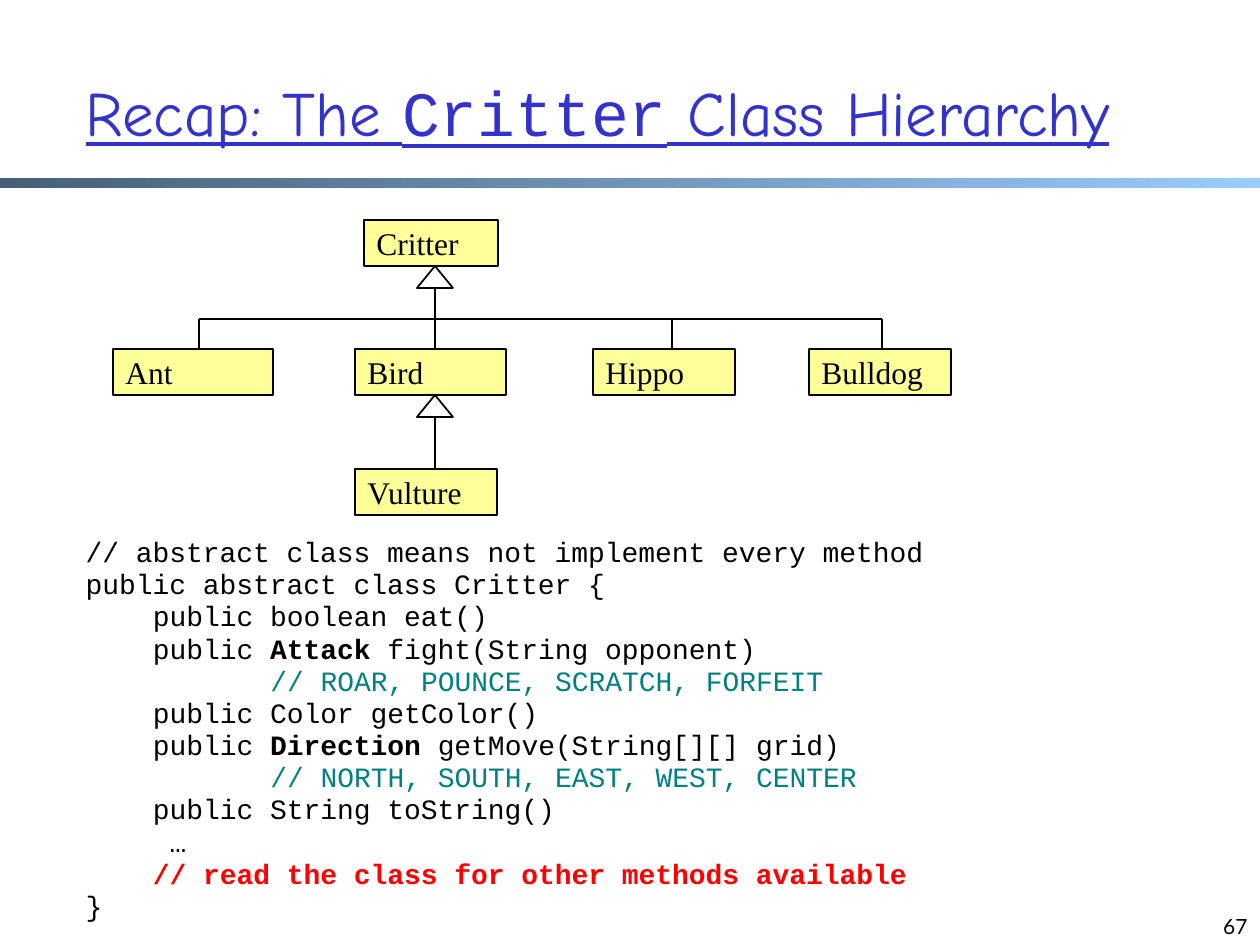
import pptx
import pptx.dml.color
import pptx.enum.dml
import pptx.enum.shapes
import pptx.enum.text
import pptx.util
from lxml import etree
from pptx.oxml.ns import qn

EMU_PER_PX = 914400 / 126
CODE_CHAR = 16.8  # width in px of one 16 pt Courier New character

BLACK, WHITE, YELLOW = "000000", "FFFFFF", "FFFF99"
BLUE, TEAL, RED = "3333CC", "008080", "FF0000"
CODE_FONT = "Courier New"

BOX_HEIGHT = 46
ROOT_TOP, CHILD_TOP, GRANDCHILD_TOP = 220, 349, 469
BRANCH_Y = 319
TRUNK_X = 435
CLASSES = [
    ("Critter", 364, ROOT_TOP, 134),
    ("Ant", 113, CHILD_TOP, 160),
    ("Bird", 355, CHILD_TOP, 151),
    ("Hippo", 593, CHILD_TOP, 142),
    ("Bulldog", 809, CHILD_TOP, 142),
    ("Vulture", 355, GRANDCHILD_TOP, 142),
]
CHILD_XS = [199, TRUNK_X, 672, 882]

# Each line: indent in characters, then runs of text and format
CODE = [
    (0, [("// abstract class means not implement every method", {})]),
    (0, [("public abstract class Critter {", {})]),
    (4, [("public boolean eat()", {})]),
    (4, [("public ", {}), ("Attack", {"bold": True}),
         (" fight(String opponent)", {})]),
    (11, [("// ROAR, POUNCE, SCRATCH, FORFEIT", {"color": TEAL})]),
    (4, [("public Color getColor()", {})]),
    (4, [("public ", {}), ("Direction ", {"bold": True}),
         ("getMove(String[][] grid)", {})]),
    (11, [("// NORTH, SOUTH, EAST, WEST, CENTER", {"color": TEAL})]),
    (4, [("public String toString()", {})]),
    (5, [("…", {})]),
    (4, [("// read the class for other methods available",
          {"color": RED, "bold": True})]),
    (0, [("}", {})]),
]


def px(length):
    return pptx.util.Emu(round(length * EMU_PER_PX))


def rgb(color):
    return pptx.dml.color.RGBColor.from_string(color)


def add_text(paragraph, text, *, size, font, color=BLACK, bold=False, underline=False):
    run = paragraph.add_run()
    run.text = text
    run.font.size = pptx.util.Pt(size)
    run.font.name = font
    run.font.color.rgb = rgb(color)
    run.font.bold = bold
    run.font.underline = underline


def place(shape, left, top, width, height):
    shape.left, shape.top = px(left), px(top)
    shape.width, shape.height = px(width), px(height)


def set_frame(shape, anchor):
    """Wrap the text at a fixed size and return its first paragraph."""
    frame = shape.text_frame
    frame.word_wrap = True
    frame.auto_size = pptx.enum.text.MSO_AUTO_SIZE.NONE
    frame.vertical_anchor = anchor
    paragraph = frame.paragraphs[0]
    paragraph.alignment = pptx.enum.text.PP_ALIGN.LEFT
    return paragraph


def add_outlined(slide, preset, left, top, width, height, fill):
    shape = slide.shapes.add_shape(
        preset, px(left), px(top), px(width), px(height))
    shape.shadow.inherit = False
    shape.fill.solid()
    shape.fill.fore_color.rgb = rgb(fill)
    shape.line.color.rgb = rgb(BLACK)
    shape.line.width = pptx.util.Pt(1)
    return shape


def add_class_box(slide, name, left, top, width):
    box = add_outlined(slide, pptx.enum.shapes.MSO_SHAPE.RECTANGLE,
                       left, top, width, BOX_HEIGHT, YELLOW)
    paragraph = set_frame(box, pptx.enum.text.MSO_ANCHOR.MIDDLE)
    add_text(paragraph, name, size=18, font="Times New Roman")


def add_line(slide, x1, y1, x2, y2):
    line = slide.shapes.add_connector(
        pptx.enum.shapes.MSO_CONNECTOR.STRAIGHT, px(x1), px(y1), px(x2), px(y2))
    line.line.color.rgb = rgb(BLACK)
    line.line.width = pptx.util.Pt(1)
    etree.SubElement(line._element.spPr, qn("a:effectLst"))
    return line


def add_inheritance(slide, bottom, top):
    """Draw the trunk up to a parent class, ending in a hollow triangle."""
    trunk = add_line(slide, TRUNK_X, bottom, TRUNK_X, top)
    etree.SubElement(trunk.line._get_or_add_ln(), qn("a:tailEnd"), type="triangle")
    add_outlined(slide, pptx.enum.shapes.MSO_SHAPE.ISOSCELES_TRIANGLE,
                 TRUNK_X - 18, top, 36, 22, WHITE)


def add_divider(slide):
    bar = slide.shapes.add_shape(
        pptx.enum.shapes.MSO_SHAPE.RECTANGLE, 0, px(178), px(1260), px(10))
    bar.shadow.inherit = False
    bar.line.fill.background()
    bar.fill.gradient()
    bar.fill.gradient_angle = 0
    for stop, position, color in zip(bar.fill.gradient_stops, (0, 1), ("475E76", "99CCFF")):
        stop.position = position
        stop.color.rgb = rgb(color)


def fill_title(title):
    place(title, 73, 32, 1144, 158)
    paragraph = set_frame(title, pptx.enum.text.MSO_ANCHOR.MIDDLE)
    for text, font in (("Recap: The ", "Comic Neue"), ("Critter", CODE_FONT),
                       (" Class Hierarchy", "Comic Neue")):
        add_text(paragraph, text, size=36, font=font, color=BLUE, underline=True)


def fill_code(body):
    place(body, 73, 536, 1113, 388)
    paragraph = set_frame(body, pptx.enum.text.MSO_ANCHOR.TOP)
    for number, (indent, runs) in enumerate(CODE):
        if number:
            paragraph = body.text_frame.add_paragraph()
        paragraph.line_spacing = 0.75
        paragraph.space_before = pptx.util.Pt(4)
        properties = paragraph._p.get_or_add_pPr()
        properties.set("marL", str(px(indent * CODE_CHAR)))
        properties.set("indent", "0")
        etree.SubElement(properties, qn("a:buNone"))
        for text, style in runs:
            add_text(paragraph, text, size=16, font=CODE_FONT, **style)


def add_hierarchy(slide):
    for name, left, top, width in CLASSES:
        add_class_box(slide, name, left, top, width)
    add_line(slide, CHILD_XS[0], BRANCH_Y, CHILD_XS[-1], BRANCH_Y)
    for x in CHILD_XS:
        add_line(slide, x, BRANCH_Y, x, CHILD_TOP)
    add_inheritance(slide, 341, ROOT_TOP + BOX_HEIGHT)
    add_inheritance(slide, GRANDCHILD_TOP, CHILD_TOP + BOX_HEIGHT)


def add_page_number(slide):
    box = slide.shapes.add_textbox(px(966), px(882), px(294), px(63))
    paragraph = set_frame(box, pptx.enum.text.MSO_ANCHOR.BOTTOM)
    paragraph.alignment = pptx.enum.text.PP_ALIGN.RIGHT
    add_text(paragraph, "67", size=12, font="Lato")


def main():
    deck = pptx.Presentation()
    deck.slide_width, deck.slide_height = px(1260), px(945)
    slide = deck.slides.add_slide(deck.slide_layouts[1])
    add_divider(slide)
    fill_title(slide.shapes.title)
    fill_code(slide.placeholders[1])
    add_hierarchy(slide)
    add_page_number(slide)
    deck.save("out.pptx")


if __name__ == "__main__":
    main()
